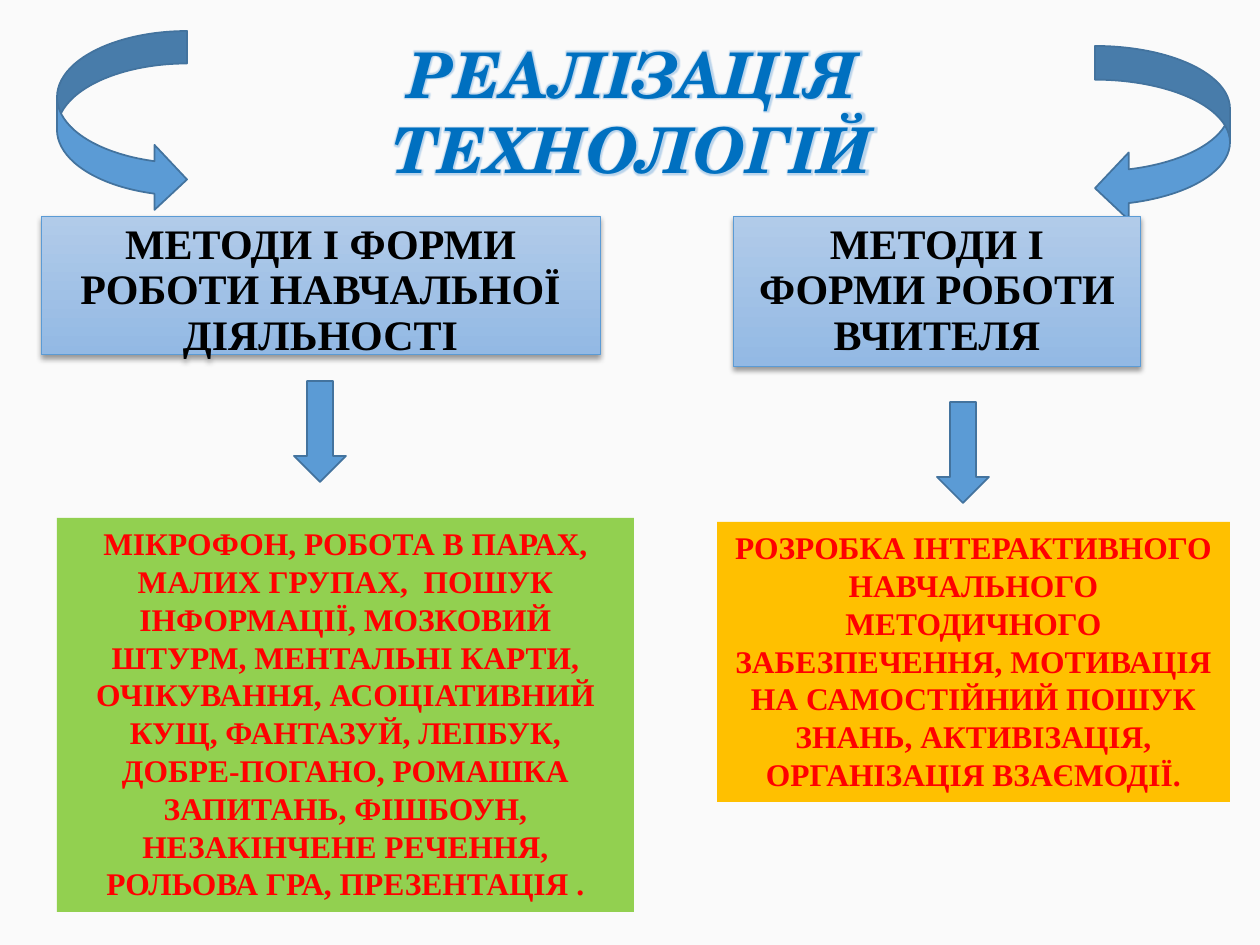
from lxml import etree
from pptx import Presentation
from pptx.dml.color import RGBColor
from pptx.enum.shapes import MSO_SHAPE
from pptx.enum.text import MSO_ANCHOR, MSO_AUTO_SIZE, PP_ALIGN
from pptx.oxml.ns import qn
from pptx.util import Emu, Pt

RECTANGLE = MSO_SHAPE.RECTANGLE
DOWN_ARROW = MSO_SHAPE.DOWN_ARROW
CURVED_LEFT = MSO_SHAPE.CURVED_LEFT_ARROW
CURVED_RIGHT = MSO_SHAPE.CURVED_RIGHT_ARROW
TOP = MSO_ANCHOR.TOP
CENTER = PP_ALIGN.CENTER
GROW = MSO_AUTO_SIZE.SHAPE_TO_FIT_TEXT
FIXED = MSO_AUTO_SIZE.NONE

EMU_PER_PX = 914400 / 126
SERIF = "Times New Roman"
BLUE, DARK_BLUE = "5B9BD5", "43739E"


def px(value):
    return Emu(round(value * EMU_PER_PX))


def color(value):
    return RGBColor.from_string(value)


def add_effect(properties, kind, hex_color, alpha, **attributes):
    """Put a shadow or glow into shape or run properties."""
    effects = properties.find(qn("a:effectLst"))
    if effects is None:
        effects = etree.Element(qn("a:effectLst"))
        latin = properties.find(qn("a:latin"))
        if latin is None:
            properties.append(effects)
        else:
            latin.addprevious(effects)
    effect = etree.SubElement(effects, qn(f"a:{kind}"), **attributes)
    tint = etree.SubElement(effect, qn("a:srgbClr"), val=hex_color)
    etree.SubElement(tint, qn("a:alpha"), val=str(alpha * 1000))


def set_text(shape, text, size, hex_color, font=SERIF, italic=False,
             spacing=None, fit=GROW):
    frame = shape.text_frame
    frame.word_wrap = True
    frame.auto_size = fit
    frame.vertical_anchor = TOP
    paragraph = frame.paragraphs[0]
    paragraph.alignment = CENTER
    if spacing:
        paragraph.line_spacing = spacing
    run = paragraph.add_run()
    run.text = text
    run.font.size = Pt(size)
    run.font.bold = True
    run.font.italic = italic
    run.font.color.rgb = color(hex_color)
    run.font.name = font
    return run


def add_title(slide, box, text):
    title = slide.shapes.add_textbox(*map(px, box))
    run = set_text(title, text, 36, "0070C0", font="TeX Gyre Schola", italic=True)
    add_effect(run.font._element, "glow", BLUE, 40, rad=str(Pt(3)))


def add_arrow(slide, kind, box):
    arrow = slide.shapes.add_shape(kind, *map(px, box))
    arrow.shadow.inherit = False
    arrow.fill.solid()
    arrow.fill.fore_color.rgb = color(BLUE)
    arrow.line.color.rgb = color(DARK_BLUE)
    arrow.line.width = Pt(1)


def add_heading(slide, box, text):
    heading = slide.shapes.add_shape(RECTANGLE, *map(px, box))
    heading.shadow.inherit = False
    heading.fill.gradient()
    heading.fill.gradient_angle = 270
    for stop, shade in zip(heading.fill.gradient_stops, ("B1CBE9", "93B9E4")):
        stop.color.rgb = color(shade)
    heading.line.color.rgb = color(BLUE)
    heading.line.width = Pt(0.5)
    add_effect(heading._element.spPr, "outerShdw", "000000", 38,
               blurRad=str(Pt(3.1)), dist=str(Pt(1.6)), dir="5400000", rotWithShape="0")
    set_text(heading, text, 24, "000000", spacing=0.9, fit=FIXED)


def add_details(slide, box, text, fill):
    details = slide.shapes.add_textbox(*map(px, box))
    details.fill.solid()
    details.fill.fore_color.rgb = color(fill)
    set_text(details, text, 18, "FF0000")


def add_column(slide, curved, curved_box, heading_box, heading, down_box,
               details_box, details, fill):
    """One branch: curved arrow, heading, down arrow, details."""
    add_arrow(slide, curved, curved_box)
    add_heading(slide, heading_box, heading)
    add_arrow(slide, DOWN_ARROW, down_box)
    add_details(slide, details_box, details, fill)


def main():
    presentation = Presentation()
    presentation.slide_width, presentation.slide_height = px(1260), px(945)
    slide = presentation.slides.add_slide(presentation.slide_layouts[6])
    slide.background.fill.solid()
    slide.background.fill.fore_color.rgb = color("FAFAFA")

    add_title(slide, (197, 29, 872, 89), "РЕАЛІЗАЦІЯ ТЕХНОЛОГІЙ")

    # Learning activity
    add_column(
        slide, CURVED_RIGHT, (57, 31, 130, 181),
        (41, 217, 559, 138), "МЕТОДИ І ФОРМИ РОБОТИ НАВЧАЛЬНОЇ ДІЯЛЬНОСТІ",
        (294, 381, 52, 101), (57, 518, 577, 394),
        "МІКРОФОН, РОБОТА В ПАРАХ, МАЛИХ ГРУПАХ,  ПОШУК ІНФОРМАЦІЇ, "
        "МОЗКОВИЙ ШТУРМ, МЕНТАЛЬНІ КАРТИ, ОЧІКУВАННЯ, АСОЦІАТИВНИЙ КУЩ, "
        "ФАНТАЗУЙ, ЛЕПБУК, ДОБРЕ-ПОГАНО, РОМАШКА ЗАПИТАНЬ, ФІШБОУН, "
        "НЕЗАКІНЧЕНЕ РЕЧЕННЯ, РОЛЬОВА ГРА, ПРЕЗЕНТАЦІЯ .", "92D050")

    # Teacher's work
    add_column(
        slide, CURVED_LEFT, (1095, 46, 135, 176),
        (733, 217, 408, 150), "МЕТОДИ І ФОРМИ РОБОТИ ВЧИТЕЛЯ",
        (937, 402, 52, 101), (717, 522, 513, 280),
        "РОЗРОБКА ІНТЕРАКТИВНОГО НАВЧАЛЬНОГО МЕТОДИЧНОГО ЗАБЕЗПЕЧЕННЯ, "
        "МОТИВАЦІЯ НА САМОСТІЙНИЙ ПОШУК ЗНАНЬ, АКТИВІЗАЦІЯ, "
        "ОРГАНІЗАЦІЯ ВЗАЄМОДІЇ.", "FFC000")

    presentation.save("out.pptx")


if __name__ == "__main__":
    main()
